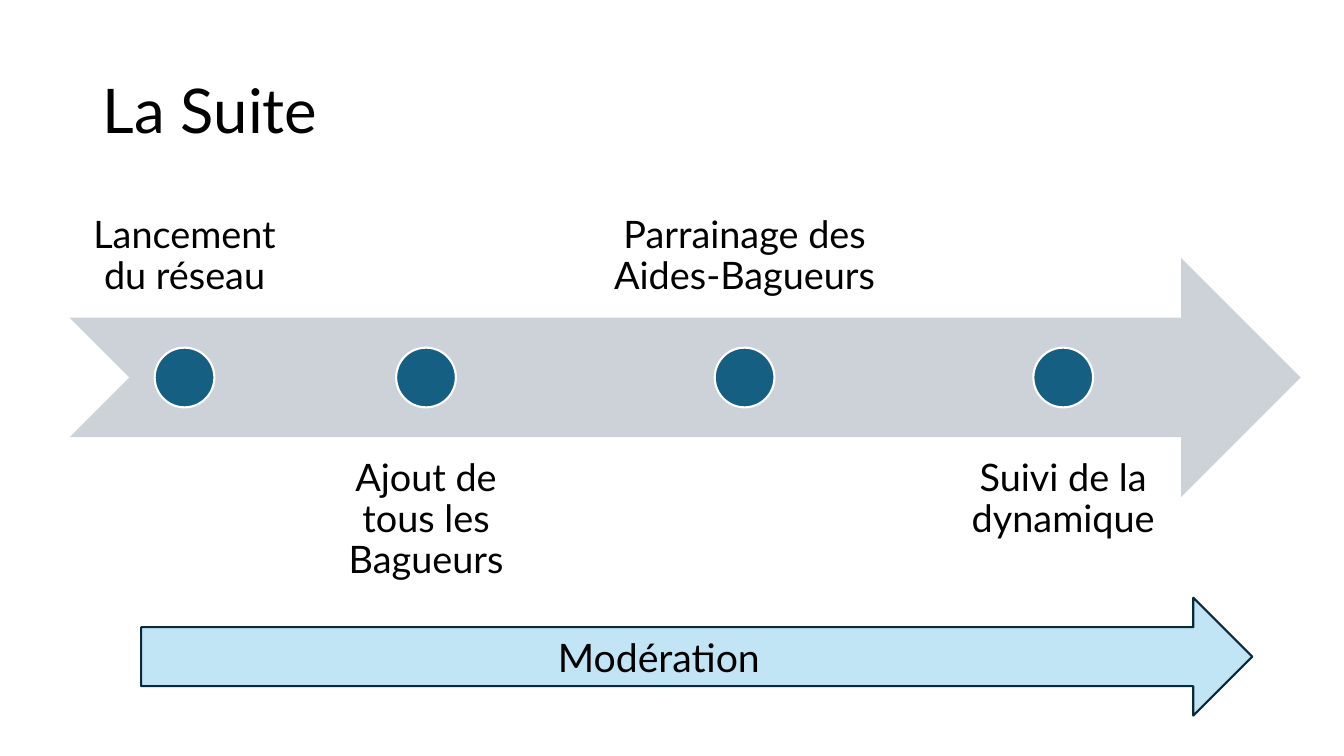
from pptx import Presentation
from pptx.dml.color import RGBColor
from pptx.enum.shapes import MSO_SHAPE
from pptx.enum.text import MSO_ANCHOR, PP_ALIGN
from pptx.util import Inches, Pt

LEFT, CENTER = PP_ALIGN.LEFT, PP_ALIGN.CENTER
TOP, MIDDLE, BOTTOM = MSO_ANCHOR.TOP, MSO_ANCHOR.MIDDLE, MSO_ANCHOR.BOTTOM

TITLE = "La Suite"
STEPS = [  # label, column width
    ("Lancement du réseau", 2.28),
    ("Ajout de tous les Bagueurs", 2.28),
    ("Parrainage des Aides-Bagueurs", 3.81),
    ("Suivi de la dynamique", 2.28),
]
SUPPORT = "Modération"

FONT = "Lato"
COLORS = {"text": "000000", "band": "CCD2D8", "dot": "156082",
          "white": "FFFFFF", "support": "C1E5F5", "outline": "092A39"}

BAND_X, BAND_Y, BAND_W, BAND_H = 0.69, 2.56, 12.21, 2.37
COL_GAP = 0.115
DOT = BAND_H / 4
LABEL_Y = {BOTTOM: 0.79, TOP: 4.34}
LABEL_INSET = 0.21
SUPPORT_X, SUPPORT_Y, SUPPORT_W, SUPPORT_H = 1.4, 5.93, 11.02, 1.17


def rgb(name):
    return RGBColor.from_string(COLORS[name])


def add_shape(slide, kind, box, fill, line=None):
    sp = slide.shapes.add_shape(kind, *map(Inches, box))
    sp.shadow.inherit = False
    sp.fill.solid()
    sp.fill.fore_color.rgb = rgb(fill)
    if line:
        sp.line.color.rgb = rgb(line)
        sp.line.width = Pt(1.5)
    else:
        sp.line.fill.background()
    return sp


def write(sp, text, size, align, anchor, spacing=1.0):
    tf = sp.text_frame
    tf.text = text
    tf.word_wrap = True
    tf.vertical_anchor = anchor
    p = tf.paragraphs[0]
    p.alignment = align
    p.line_spacing = spacing
    font = p.runs[0].font
    font.name, font.size = FONT, Pt(size)
    font.color.rgb = rgb("text")
    return tf


def add_text(slide, box, *style):
    return write(slide.shapes.add_textbox(*map(Inches, box)), *style)


def add_timeline(slide):
    add_shape(slide, MSO_SHAPE.NOTCHED_RIGHT_ARROW,
              (BAND_X, BAND_Y, BAND_W, BAND_H), "band")
    x = BAND_X
    for i, (label, width) in enumerate(STEPS):
        anchor = TOP if i % 2 else BOTTOM
        tf = add_text(slide, (x, LABEL_Y[anchor], width, BAND_H),
                      label, 27, CENTER, anchor, 0.9)
        tf.margin_left = tf.margin_right = Inches(LABEL_INSET)
        tf.margin_top = tf.margin_bottom = Inches(LABEL_INSET)
        dot_x = x + (width - DOT) / 2
        dot_y = BAND_Y + (BAND_H - DOT) / 2
        add_shape(slide, MSO_SHAPE.OVAL, (dot_x, dot_y, DOT, DOT), "dot", "white")
        x += width + COL_GAP


def add_support(slide):
    add_shape(slide, MSO_SHAPE.RIGHT_ARROW,
              (SUPPORT_X, SUPPORT_Y, SUPPORT_W, SUPPORT_H), "support", "outline")
    text_h = 0.57
    text_y = SUPPORT_Y + (SUPPORT_H - text_h) / 2
    add_text(slide, (SUPPORT_X, text_y, 10.27, text_h),
             SUPPORT, 28, CENTER, TOP)


def main():
    prs = Presentation()
    prs.slide_width, prs.slide_height = Inches(13.33), Inches(7.5)
    slide = prs.slides.add_slide(prs.slide_layouts[5])
    title = slide.shapes.title
    title.left, title.top = Inches(0.92), Inches(0.4)
    title.width, title.height = Inches(11.5), Inches(1.45)
    write(title, TITLE, 44, LEFT, MIDDLE, 0.9)
    add_timeline(slide)
    add_support(slide)
    prs.save("out.pptx")


if __name__ == "__main__":
    main()
